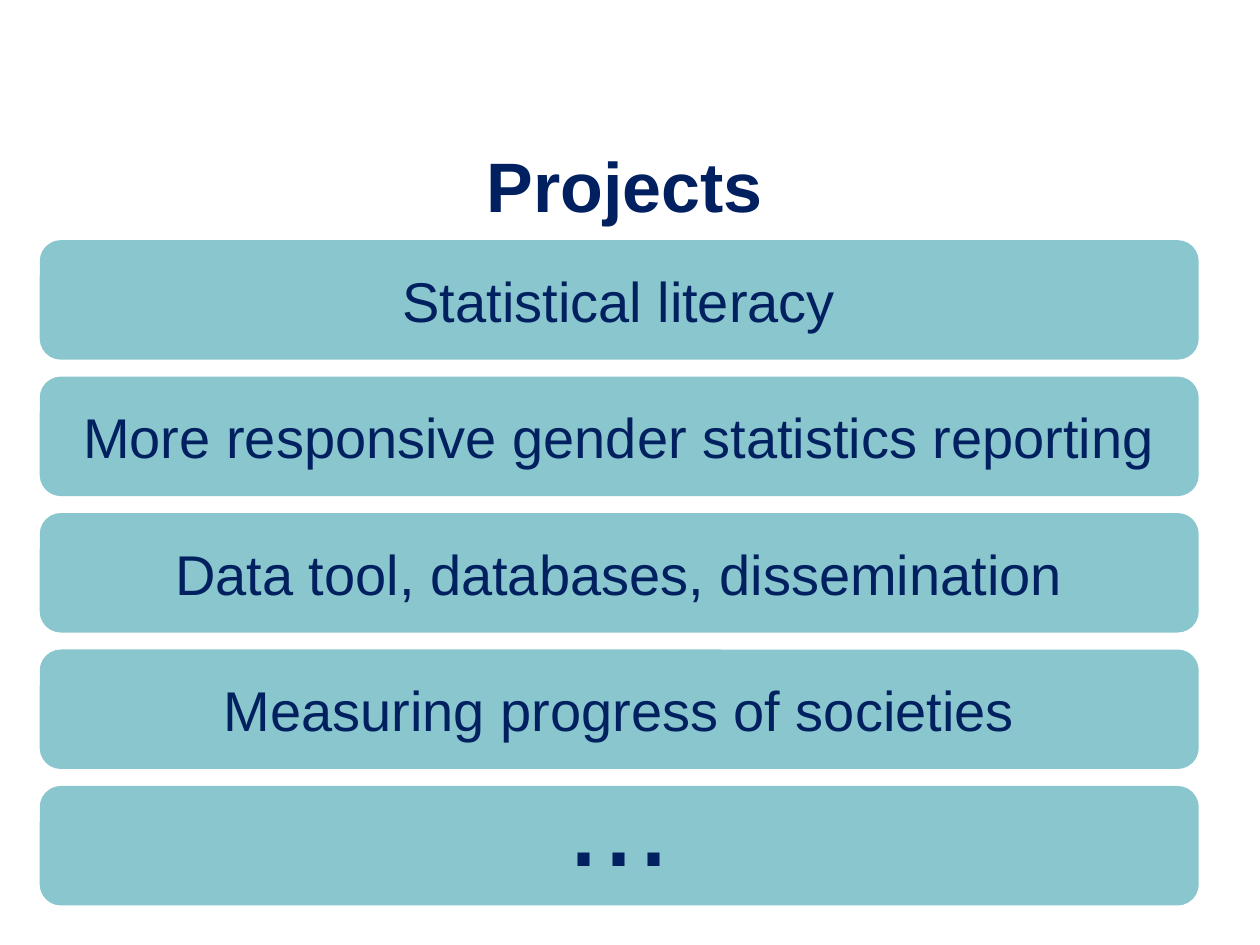
from pptx import Presentation
from pptx.dml.color import RGBColor
from pptx.enum.shapes import MSO_SHAPE
from pptx.enum.text import MSO_ANCHOR, PP_ALIGN
from pptx.util import Inches, Pt

NAVY = RGBColor(0x00, 0x20, 0x60)
TEAL = RGBColor(0x8A, 0xC6, 0xCD)
WHITE = RGBColor(0xFF, 0xFF, 0xFF)

TITLE = "Projects"
PROJECTS = [
    ("Statistical literacy", 32, MSO_ANCHOR.MIDDLE),
    ("More responsive gender statistics reporting", 32, MSO_ANCHOR.MIDDLE),
    ("Data tool, databases, dissemination", 32, MSO_ANCHOR.MIDDLE),
    ("Measuring progress of societies", 32, MSO_ANCHOR.MIDDLE),
    ("...", 72, MSO_ANCHOR.BOTTOM),
]
LEFT, TOP, WIDTH, HEIGHT = 0.33, 1.92, 9.17, 0.92
PITCH = 1.083


def write(sp, text, size, anchor, bold=False):
    tf = sp.text_frame
    tf.word_wrap = True
    tf.vertical_anchor = anchor
    p = tf.paragraphs[0]
    p.alignment = PP_ALIGN.CENTER
    r = p.add_run()
    r.text = text
    r.font.name = "Arial"
    r.font.size = Pt(size)
    r.font.bold = bold
    r.font.color.rgb = NAVY


def add_bar(s, row, text, size, anchor):
    sp = s.shapes.add_shape(
        MSO_SHAPE.ROUNDED_RECTANGLE,
        Inches(LEFT), Inches(TOP + row * PITCH), Inches(WIDTH), Inches(HEIGHT),
    )
    sp.shadow.inherit = False
    sp.fill.solid()
    sp.fill.fore_color.rgb = TEAL
    sp.line.color.rgb = TEAL
    sp.line.width = Pt(2)
    write(sp, text, size, anchor)


def main():
    prs = Presentation()
    prs.slide_width, prs.slide_height = Inches(10), Inches(7.5)
    s = prs.slides.add_slide(prs.slide_layouts[5])
    s.background.fill.solid()
    s.background.fill.fore_color.rgb = WHITE

    title = s.shapes.title
    title.left, title.top = Inches(1), Inches(1.08)
    title.width, title.height = Inches(7.92), Inches(0.77)
    write(title, TITLE, 40, MSO_ANCHOR.TOP, bold=True)

    for row, project in enumerate(PROJECTS):
        add_bar(s, row, *project)

    prs.save("out.pptx")


if __name__ == "__main__":
    main()
